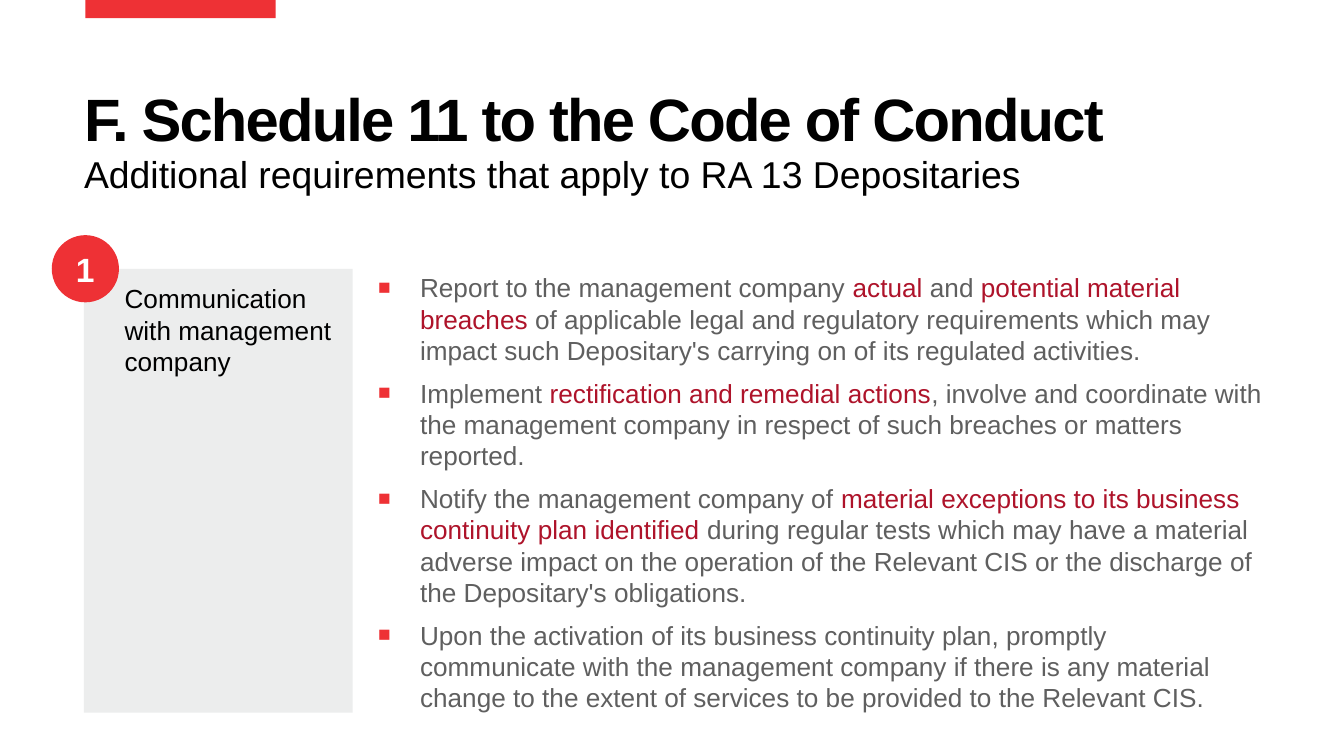
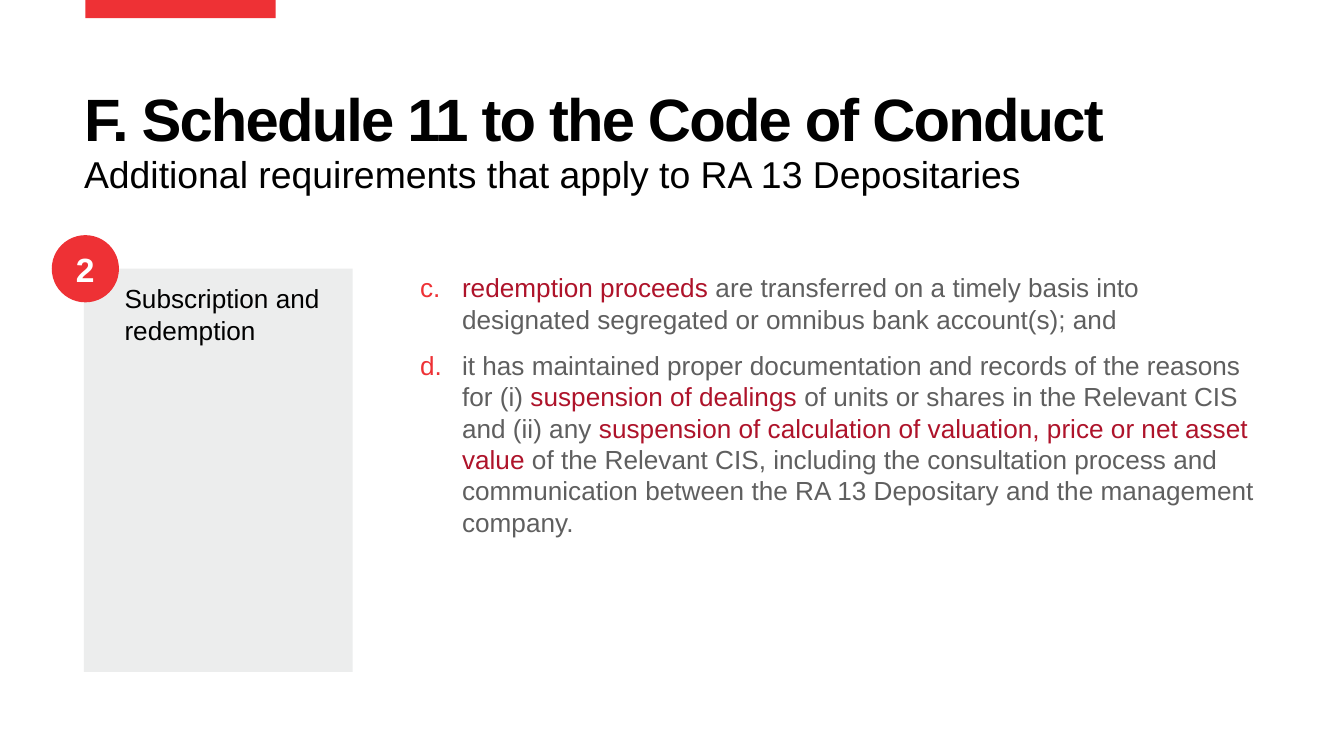
from dataclasses import dataclass

from lxml import etree
from pptx import Presentation
from pptx.dml.color import RGBColor
from pptx.enum.shapes import MSO_SHAPE
from pptx.enum.text import MSO_ANCHOR, PP_ALIGN
from pptx.oxml.ns import qn
from pptx.util import Pt

PX = 9525  # EMU in one px, 96 px to the inch
RECTANGLE, OVAL = MSO_SHAPE.RECTANGLE, MSO_SHAPE.OVAL
TOP, MIDDLE, BOTTOM = MSO_ANCHOR.TOP, MSO_ANCHOR.MIDDLE, MSO_ANCHOR.BOTTOM
CENTER = PP_ALIGN.CENTER


@dataclass(frozen=True)
class Theme:
    font: str = "Arial"
    red: str = "EE3135"
    highlight: str = "AE132A"
    body: str = "5F5F5F"
    panel: str = "ECEDED"
    black: str = "000000"
    white: str = "FFFFFF"
    title_size: int = 32
    subtitle_size: int = 20
    badge_size: int = 18
    text_size: int = 14


THEME = Theme()

TITLE = "F. Schedule 11 to the Code of Conduct"
SUBTITLE = "Additional requirements that apply to RA 13 Depositaries"

# Text between bars is highlighted.
SQUARE_LIST = {
    "indent": 30, "space_after": 6,
    "marker": [("a:buSzPct", {"val": "80000"}),
               ("a:buFont", {"typeface": THEME.font}),
               ("a:buChar", {"char": "■"})],
}
LETTER_LIST = {
    "indent": 60, "space_after": 8,
    "marker": [("a:buFont", {"typeface": THEME.font}),
               ("a:buAutoNum", {"type": "alphaLcPeriod", "startAt": "3"})],
}
TOPICS = [
    {"number": "1", "name": "Communication with management company",
     "panel_height": 317, "style": SQUARE_LIST, "items": [
         "Report to the management company |actual| and |potential material "
         "breaches| of applicable legal and regulatory requirements which may "
         "impact such Depositary's carrying on of its regulated activities.",
         "Implement |rectification and remedial actions|, involve and "
         "coordinate with the management company in respect of such breaches "
         "or matters reported.",
         "Notify the management company of |material exceptions to its "
         "business continuity plan identified| during regular tests which may "
         "have a material adverse impact on the operation of the Relevant CIS "
         "or the discharge of the Depositary's obligations.",
         "Upon the activation of its business continuity plan, promptly "
         "communicate with the management company if there is any material "
         "change to the extent of services to be provided to the Relevant CIS.",
     ]},
    {"number": "2", "name": "Subscription and redemption",
     "panel_height": 288, "style": LETTER_LIST, "items": [
         "|redemption proceeds| are transferred on a timely basis into "
         "designated segregated or omnibus bank account(s); and",
         "it has maintained proper documentation and records of the reasons "
         "for (i) |suspension of dealings| of units or shares in the Relevant "
         "CIS and (ii) any |suspension of calculation of valuation, price or "
         "net asset value| of the Relevant CIS, including the consultation "
         "process and communication between the RA 13 Depositary and the "
         "management company.",
     ]},
]


def add_box(page, left, top, width, height, shape=None, fill=None,
            insets=(0, 0, 0, 0), anchor=TOP):
    """Add a filled shape, or a text box when no shape is given."""
    place = [length * PX for length in (left, top, width, height)]
    if shape is None:
        box = page.shapes.add_textbox(*place)
    else:
        box = page.shapes.add_shape(shape, *place)
        box.shadow.inherit = False
        box.fill.solid()
        box.fill.fore_color.rgb = RGBColor.from_string(fill)
        box.line.fill.background()
    frame = box.text_frame
    frame.word_wrap = True
    frame.vertical_anchor = anchor
    (frame.margin_left, frame.margin_top,
     frame.margin_right, frame.margin_bottom) = [inset * PX for inset in insets]
    return box


def write(para, text, size, color, bold=False):
    """Write text into a paragraph, highlighting what stands between bars."""
    para.font.name = THEME.font
    para.font.size = Pt(size)
    para.font.bold = bold
    para.font.color.rgb = RGBColor.from_string(color)
    for index, part in enumerate(text.split("|")):
        if part:
            span = para.add_run()
            span.text = part
            shade = THEME.highlight if index % 2 else color
            span.font.color.rgb = RGBColor.from_string(shade)


deck = Presentation()
deck.slide_width, deck.slide_height = 960 * PX, 540 * PX
blank = deck.slide_layouts[6]

for topic in TOPICS:
    page = deck.slides.add_slide(blank)
    add_box(page, 61, 0, 136, 13, RECTANGLE, THEME.red)

    para = add_box(page, 60, 67, 844, 43, anchor=BOTTOM).text_frame.paragraphs[0]
    para.line_spacing = 0.9
    write(para, TITLE, THEME.title_size, THEME.black, bold=True)
    para.runs[0].font._element.set("spc", "-100")

    para = add_box(page, 60, 108, 844, 38).text_frame.paragraphs[0]
    write(para, SUBTITLE, THEME.subtitle_size, THEME.black)

    style = topic["style"]
    frame = add_box(page, 270, 194, 634, 302).text_frame
    for index, item in enumerate(topic["items"]):
        para = frame.add_paragraph() if index else frame.paragraphs[0]
        para.space_after = Pt(style["space_after"])
        properties = para._p.get_or_add_pPr()
        properties.set("marL", str(style["indent"] * PX))
        properties.set("indent", str(-30 * PX))
        color = etree.SubElement(properties, qn("a:buClr"))
        etree.SubElement(color, qn("a:srgbClr"), val=THEME.red)
        for tag, attributes in style["marker"]:
            etree.SubElement(properties, qn(tag), attributes)
        write(para, item, THEME.text_size, THEME.body)

    panel = add_box(page, 60, 192, 192, topic["panel_height"], RECTANGLE,
                    THEME.panel, insets=(29, 10, 10, 10))
    para = panel.text_frame.paragraphs[0]
    para.alignment = PP_ALIGN.LEFT
    write(para, topic["name"], THEME.text_size, THEME.black)

    badge = add_box(page, 37, 168, 48, 48, OVAL, THEME.red,
                    insets=(8, 8, 8, 8), anchor=MIDDLE)
    para = badge.text_frame.paragraphs[0]
    para.alignment = CENTER
    write(para, topic["number"], THEME.badge_size, THEME.white, bold=True)

deck.save("out.pptx")
